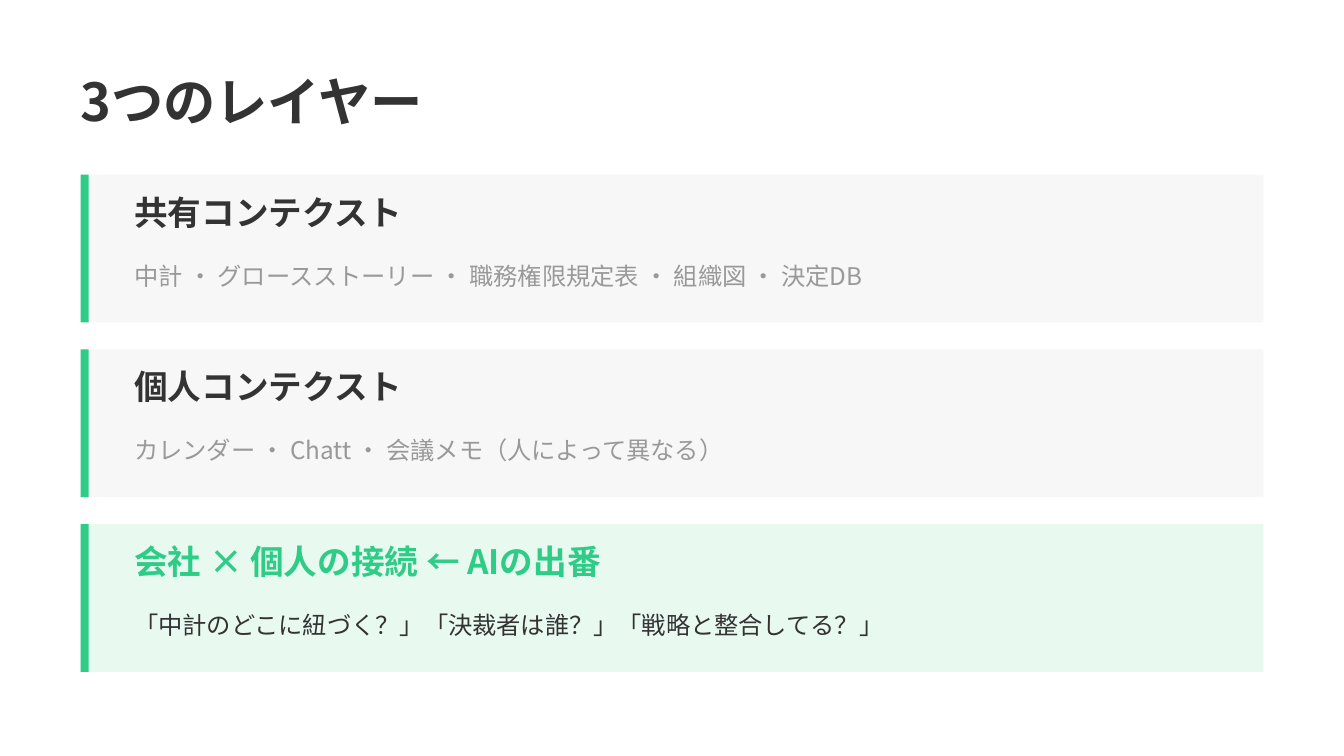
from pptx import Presentation
from pptx.dml.color import RGBColor
from pptx.enum.shapes import MSO_SHAPE as Shape
from pptx.enum.text import MSO_ANCHOR as Anchor
from pptx.oxml.ns import qn
from pptx.util import Pt
from lxml.etree import SubElement

PX = 4572  # EMU per px, 200 px to the inch
FONT = "Noto Sans CJK JP"
DARK, GRAY, GREEN = "333333", "999999", "2ECC87"
PALE_GRAY, PALE_GREEN = "F7F7F7", "E8FAF0"

presentation = Presentation()
presentation.slide_width = 2000 * PX
presentation.slide_height = 1125 * PX
slide = presentation.slides.add_slide(presentation.slide_layouts[6])


def add_text(text, left, top, width, height, size, color, bold=False):
    box = slide.shapes.add_textbox(left * PX, top * PX, width * PX, height * PX)
    frame = box.text_frame
    frame.word_wrap = True
    frame.vertical_anchor = Anchor.MIDDLE
    frame.margin_left = frame.margin_right = 0
    frame.margin_top = frame.margin_bottom = 0
    run = frame.paragraphs[0].add_run()
    run.text = text
    font = run.font
    font.name, font.size, font.bold = FONT, Pt(size), bold
    font.color.rgb = RGBColor.from_string(color)
    # font.name covers Latin only; Japanese text needs the East Asian font
    SubElement(run._r.get_or_add_rPr(), qn("a:ea"), typeface=FONT)


def add_bar(left, top, width, height, color):
    shape = slide.shapes.add_shape(
        Shape.RECTANGLE, left * PX, top * PX, width * PX, height * PX)
    shape.shadow.inherit = False
    shape.fill.solid()
    shape.fill.fore_color.rgb = RGBColor.from_string(color)
    shape.line.fill.background()


add_text("3つのレイヤー", 120, 80, 1800, 140, size=28, color=DARK, bold=True)

layers = [
    ("共有コンテクスト",
     "中計 ・ グロースストーリー ・ 職務権限規定表 ・ 組織図 ・ 決定DB",
     PALE_GRAY, DARK, GRAY),
    ("個人コンテクスト",
     "カレンダー ・ Chatt ・ 会議メモ（人によって異なる）",
     PALE_GRAY, DARK, GRAY),
    ("会社 × 個人の接続 ← AIの出番",
     "「中計のどこに紐づく？」「決裁者は誰？」「戦略と整合してる？」",
     PALE_GREEN, GREEN, DARK),
]
for index, (heading, detail, fill, heading_color, detail_color) in enumerate(layers):
    top = 260 + index * 260
    add_bar(120, top, 1760, 220, fill)
    add_bar(120, top, 12, 220, GREEN)
    add_text(heading, 200, top + 10, 1200, 90, size=18, color=heading_color, bold=True)
    add_text(detail, 200, top + 110, 1600, 80, size=13, color=detail_color)

presentation.save("out.pptx")
